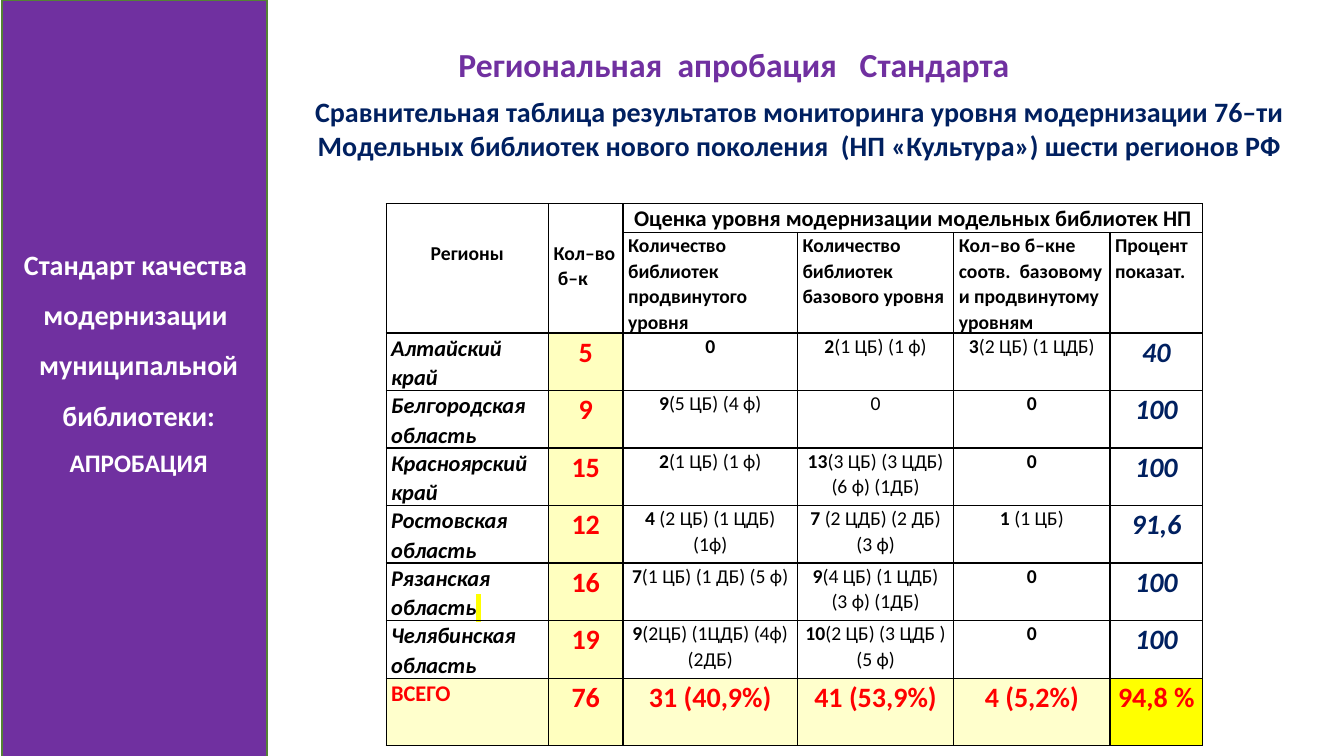
from dataclasses import dataclass

import pptx
import pptx.dml.color
import pptx.enum.dml
import pptx.enum.shapes
import pptx.enum.text
import pptx.oxml
import pptx.oxml.ns
import pptx.util
from pptx.util import Inches

RGBColor = pptx.dml.color.RGBColor
PP_ALIGN = pptx.enum.text.PP_ALIGN
MSO_ANCHOR = pptx.enum.text.MSO_ANCHOR

PURPLE = RGBColor(0x70, 0x30, 0xA0)
GREEN = RGBColor(0x54, 0x82, 0x35)
NAVY = RGBColor(0x00, 0x20, 0x60)
RED = RGBColor(0xFF, 0x00, 0x00)
YELLOW = RGBColor(0xFF, 0xFF, 0x00)
CREAM = RGBColor(0xFF, 0xFF, 0xCC)
WHITE = RGBColor(0xFF, 0xFF, 0xFF)
BLACK = RGBColor(0x00, 0x00, 0x00)


@dataclass(frozen=True)
class Style:
    size: int
    color: RGBColor = BLACK
    bold: bool = True
    italic: bool = False
    align: PP_ALIGN = PP_ALIGN.CENTER
    line_spacing: float = 1.07
    space_after: int = 8


@dataclass(frozen=True)
class Region:
    name: str
    libraries: str
    # In each score the part before the bar is bold
    scores: tuple[str, str, str]
    percent: str


LEFT = PP_ALIGN.LEFT
HEADER = Style(14)
HEADER_LEFT = Style(14, align=LEFT)
BANNER = Style(16)
REGION_NAME = Style(16, italic=True, align=LEFT)
LIBRARIES = Style(20, RED)
SCORE = Style(14, bold=False)
PERCENT = Style(20, NAVY, italic=True)
TOTAL_NAME = Style(16, RED, align=LEFT)

COLUMN_WIDTHS = (1.61, 0.74, 1.73, 1.55, 1.55, 0.92)
ROW_HEIGHTS = (0.26, 0.95, 0.54, 0.54, 0.46, 0.44, 0.54, 0.48, 0.67)
SCORE_HEADERS = (
    "Количество библиотек продвинутого уровня",
    "Количество библиотек базового уровня",
    "Кол–во б–кне соотв.  базовому и продвинутому уровням",
    "Процент показат.",
)
REGIONS = (
    Region("Алтайский край", "5", ("0|", "2|(1 ЦБ) (1 ф)", "3|(2 ЦБ) (1 ЦДБ)"), "40"),
    Region("Белгородская область", "9", ("9|(5 ЦБ) (4 ф)", "|0", "0|"), "100"),
    Region("Красноярский край", "15",
           ("2|(1 ЦБ) (1 ф)", "13|(3 ЦБ) (3 ЦДБ) (6 ф) (1ДБ)", "0|"), "100"),
    Region("Ростовская область", "12",
           ("4 |(2 ЦБ) (1 ЦДБ) (1ф)", "7 |(2 ЦДБ) (2 ДБ) (3 ф)", "1| (1 ЦБ)"), "91,6"),
    Region("Рязанская область", "16",
           ("7|(1 ЦБ) (1 ДБ) (5 ф)", "9|(4 ЦБ) (1 ЦДБ) (3 ф) (1ДБ)", "0|"), "100"),
    Region("Челябинская область", "19",
           ("9|(2ЦБ) (1ЦДБ) (4ф) (2ДБ)", "10|(2 ЦБ) (3 ЦДБ ) (5 ф)", "0|"), "100"),
)
HIGHLIGHTED_REGION = "Рязанская область"
TOTALS = ("76", "31 (40,9%)", "41 (53,9%)", "4 (5,2%)", "94,8 %")


def format_paragraph(paragraph, style: Style) -> None:
    paragraph.alignment = style.align
    paragraph.line_spacing = style.line_spacing
    paragraph.space_before = pptx.util.Pt(0)
    paragraph.space_after = pptx.util.Pt(style.space_after)
    font = paragraph.font
    font.name = "Calibri"
    font.size = pptx.util.Pt(style.size)
    font.bold = style.bold
    font.italic = style.italic
    font.color.rgb = style.color


def write_paragraph(paragraph, text: str, style: Style) -> None:
    paragraph.add_run().text = text
    format_paragraph(paragraph, style)


def write_score(paragraph, score: str) -> None:
    total, _, detail = score.partition("|")
    if total:
        lead = paragraph.add_run()
        lead.text = total
        lead.font.bold = True
    if detail:
        paragraph.add_run().text = detail
    format_paragraph(paragraph, SCORE)


def add_highlighted_space(paragraph) -> None:
    run = paragraph.add_run()
    run.text = "\N{NO-BREAK SPACE}"
    run._r.get_or_add_rPr().append(pptx.oxml.parse_xml(
        f'<a:highlight {pptx.oxml.ns.nsdecls("a")}><a:srgbClr val="{YELLOW}"/></a:highlight>'))


def outline_cell(cell) -> None:
    for side in ("lnL", "lnR", "lnT", "lnB"):
        cell._tc.get_or_add_tcPr().append(pptx.oxml.parse_xml(
            f'<a:{side} {pptx.oxml.ns.nsdecls("a")} w="12700"><a:solidFill>'
            f'<a:srgbClr val="{BLACK}"/></a:solidFill></a:{side}>'))


def fill_cell(cell, color: RGBColor, alpha: int = 100) -> None:
    cell.fill.solid()
    cell.fill.fore_color.rgb = color
    if alpha < 100:
        tint = cell._tc.tcPr.find(
            f"{pptx.oxml.ns.qn('a:solidFill')}/{pptx.oxml.ns.qn('a:srgbClr')}")
        tint.append(pptx.oxml.parse_xml(
            f'<a:alpha {pptx.oxml.ns.nsdecls("a")} val="{alpha * 1000}"/>'))


def add_sidebar(slide) -> None:
    sidebar = slide.shapes.add_shape(pptx.enum.shapes.MSO_SHAPE.RECTANGLE, Inches(0.02),
                                     Inches(0), Inches(2.63), Inches(7.52))
    sidebar.shadow.inherit = False
    sidebar.fill.solid()
    sidebar.fill.fore_color.rgb = PURPLE
    sidebar.line.color.rgb = GREEN
    sidebar.line.width = pptx.util.Pt(1)
    frame = sidebar.text_frame
    frame.word_wrap = True
    frame.vertical_anchor = MSO_ANCHOR.MIDDLE
    frame.margin_left = Inches(0.18)
    frame.margin_bottom = Inches(0.55)
    write_paragraph(frame.paragraphs[0],
                    "Стандарт качества  модернизации  муниципальной библиотеки:",
                    Style(20, WHITE, line_spacing=1.5, space_after=0))
    write_paragraph(frame.add_paragraph(), "АПРОБАЦИЯ",
                    Style(18, WHITE, line_spacing=1.5, space_after=0))


def add_headings(slide) -> None:
    title = slide.shapes.title
    title.left, title.top = Inches(3.83), Inches(0.39)
    title.width, title.height = Inches(6.46), Inches(0.5)
    frame = title.text_frame
    frame.word_wrap = True
    frame.auto_size = pptx.enum.text.MSO_AUTO_SIZE.SHAPE_TO_FIT_TEXT
    frame.vertical_anchor = MSO_ANCHOR.TOP
    frame.margin_left = Inches(0.54)
    write_paragraph(frame.paragraphs[0], "Региональная  апробация   Стандарта",
                    Style(24, PURPLE, line_spacing=1.0, space_after=0))

    subtitle = slide.shapes.add_textbox(Inches(2.81), Inches(0.89), Inches(10.24), Inches(0.77))
    subtitle.text_frame.word_wrap = True
    write_paragraph(subtitle.text_frame.paragraphs[0],
                    "Сравнительная таблица результатов мониторинга уровня модернизации 76–ти "
                    "Модельных библиотек нового поколения  (НП «Культура») шести регионов РФ",
                    Style(20, NAVY, line_spacing=1.0))


def add_results_table(slide) -> None:
    table = slide.shapes.add_table(len(ROW_HEIGHTS), len(COLUMN_WIDTHS), Inches(3.83),
                                   Inches(2.02), Inches(8.1), Inches(5.28)).table
    table.first_row = table.horz_banding = False
    for column, width in zip(table.columns, COLUMN_WIDTHS):
        column.width = Inches(width)
    for row, height in zip(table.rows, ROW_HEIGHTS):
        row.height = Inches(height)
    for cell in table.iter_cells():
        cell.margin_left = cell.margin_right = Inches(0.05)
        cell.margin_top = cell.margin_bottom = Inches(0)
        outline_cell(cell)
        cell.fill.background()

    def write(row: int, column: int, text: str, style: Style) -> None:
        write_paragraph(table.cell(row, column).text_frame.paragraphs[0], text, style)

    # Header rows
    for column, (text, style) in enumerate((("Регионы", HEADER), ("Кол–во  б–к", HEADER_LEFT))):
        table.cell(0, column).merge(table.cell(1, column))
        table.cell(0, column).margin_top = Inches(0.36)
        write(0, column, text, style)
    table.cell(0, 2).merge(table.cell(0, 5))
    write(0, 2, "Оценка уровня модернизации модельных библиотек НП", BANNER)
    for column, text in enumerate(SCORE_HEADERS, start=2):
        write(1, column, text, HEADER_LEFT)

    # Regions
    for row, region in enumerate(REGIONS, start=2):
        write(row, 0, region.name, REGION_NAME)
        if region.name == HIGHLIGHTED_REGION:
            add_highlighted_space(table.cell(row, 0).text_frame.paragraphs[0])
        write(row, 1, region.libraries, LIBRARIES)
        fill_cell(table.cell(row, 1), YELLOW, alpha=25)
        for column, score in enumerate(region.scores, start=2):
            write_score(table.cell(row, column).text_frame.paragraphs[0], score)
        write(row, 5, region.percent, PERCENT)

    # Totals
    last = len(ROW_HEIGHTS) - 1
    write(last, 0, "ВСЕГО", TOTAL_NAME)
    for column, text in enumerate(TOTALS, start=1):
        write(last, column, text, LIBRARIES)
    for column in (0, 2, 3, 4):
        fill_cell(table.cell(last, column), CREAM)
    fill_cell(table.cell(last, 1), YELLOW, alpha=25)
    fill_cell(table.cell(last, 5), YELLOW)


def main() -> None:
    deck = pptx.Presentation()
    deck.slide_width, deck.slide_height = Inches(13.33), Inches(7.5)
    slide = deck.slides.add_slide(deck.slide_layouts[5])
    add_sidebar(slide)
    add_headings(slide)
    add_results_table(slide)
    deck.save("out.pptx")


if __name__ == "__main__":
    main()
